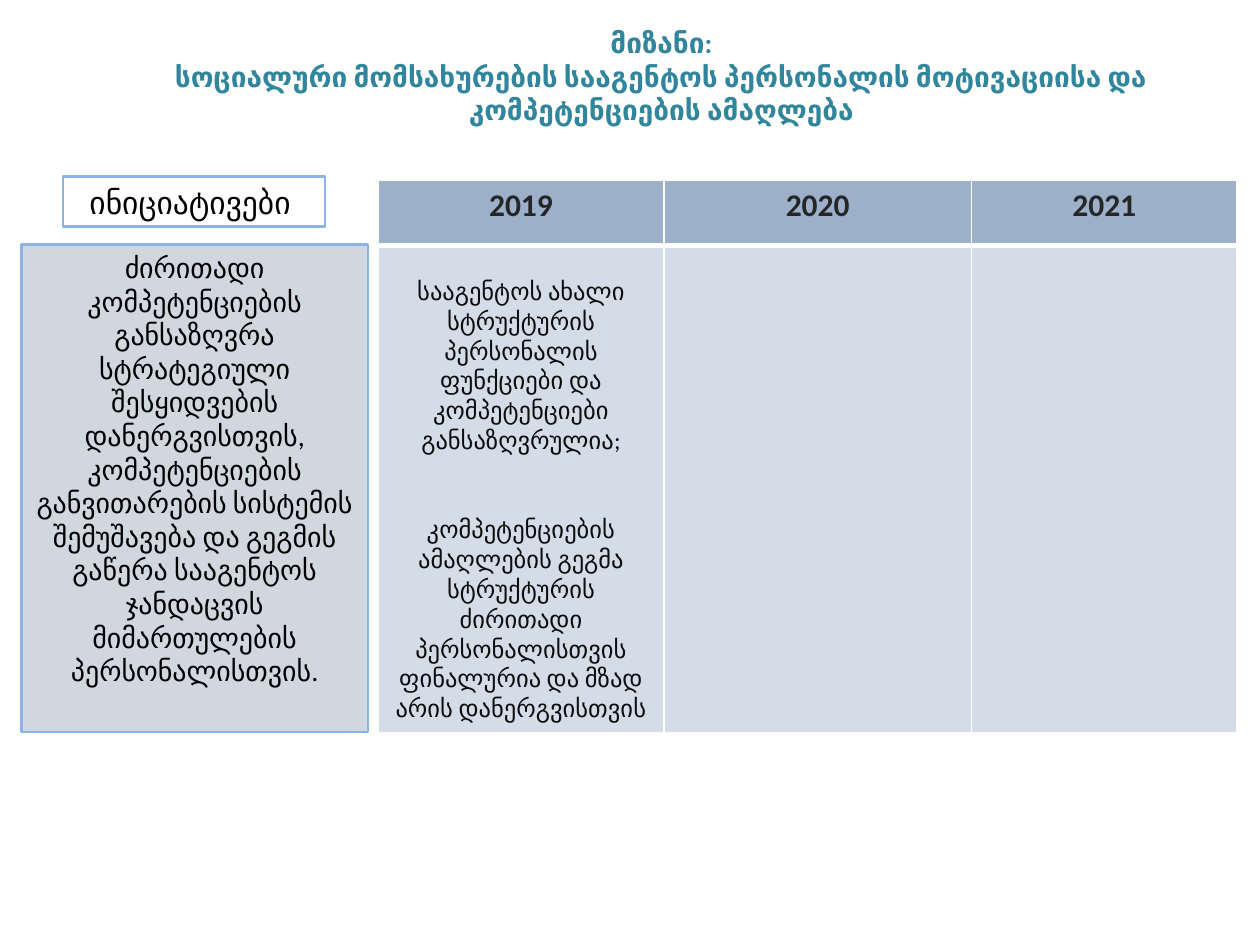
from dataclasses import dataclass

from lxml.etree import SubElement
from pptx import Presentation
from pptx.dml.color import RGBColor
from pptx.enum.shapes import MSO_SHAPE
from pptx.enum.text import MSO_ANCHOR, PP_ALIGN
from pptx.oxml.ns import qn
from pptx.util import Inches, Pt

FONT = "Calibri"
BLACK, WHITE = "000000", "FFFFFF"
TEAL, NAVY, BLUE, SKY = "31859C", "17375E", "376092", "8EB4E3"
HEADER_TEXT, BODY_TEXT = "262626", "0D0D0D"

TITLE = [
    "მიზანი:",
    "სოციალური მომსახურების სააგენტოს პერსონალის მოტივაციისა და კომპეტენციების ამაღლება",
]
INITIATIVE = (
    "ძირითადი კომპეტენციების განსაზღვრა სტრატეგიული შესყიდვების დანერგვისთვის, "
    "კომპეტენციების განვითარების სისტემის შემუშავება და გეგმის გაწერა სააგენტოს "
    "ჯანდაცვის მიმართულების პერსონალისთვის."
)
YEARS = ["2019", "2020", "2021"]
RESULTS_2019 = [
    "სააგენტოს ახალი სტრუქტურის პერსონალის ფუნქციები და კომპეტენციები განსაზღვრულია;",
    "კომპეტენციების ამაღლების გეგმა სტრუქტურის ძირითადი პერსონალისთვის ფინალურია "
    "და მზად არის დანერგვისთვის",
]
COLUMN_WIDTHS = [2.27, 2.44, 2.11]
ROW_HEIGHTS = [0.52, 3.87]


@dataclass
class Box:
    left: float
    top: float
    width: float
    height: float

    def lengths(self) -> list:
        return [Inches(v) for v in (self.left, self.top, self.width, self.height)]


def rgb(color: str) -> RGBColor:
    return RGBColor.from_string(color)


def write(tf, paragraphs: list[str], *, size: float, color: str, bold: bool = False,
          align=PP_ALIGN.CENTER, gap: float = 0) -> None:
    """Fill a text frame; gap is the space in points between paragraphs."""
    tf.word_wrap = True
    for i, text in enumerate(paragraphs):
        p = tf.paragraphs[0] if i == 0 else tf.add_paragraph()
        p.alignment = align
        if i and gap:
            p.space_before = Pt(gap)
        r = p.add_run()
        r.text = text
        r.font.name, r.font.size, r.font.bold = FONT, Pt(size), bold
        r.font.color.rgb = rgb(color)


def fill_clear(fill, props, color: str, opacity: int) -> None:
    """Fill solid with an opacity in percent; props is the XML holding the fill."""
    fill.solid()
    fill.fore_color.rgb = rgb(color)
    clr = props.find(qn("a:solidFill")).find(qn("a:srgbClr"))
    SubElement(clr, qn("a:alpha"), val=str(opacity * 1000))


def set_borders(cell, bottom: float) -> None:
    """Draw white 1 pt borders, with the bottom one of its own width."""
    tc_pr = cell._tc.get_or_add_tcPr()
    for i, (side, width) in enumerate([("L", 1), ("R", 1), ("T", 1), ("B", bottom)]):
        ln = SubElement(tc_pr, qn(f"a:ln{side}"), w=str(Pt(width)))
        SubElement(SubElement(ln, qn("a:solidFill")), qn("a:srgbClr"), val=WHITE)
        tc_pr.insert(i, ln)


def add_panel(slide, box: Box):
    sp = slide.shapes.add_shape(MSO_SHAPE.RECTANGLE, *box.lengths())
    sp.shadow.inherit = False
    sp.fill.background()
    sp.line.color.rgb = rgb(SKY)
    sp.line.width = Pt(1.5)
    sp.text_frame.vertical_anchor = MSO_ANCHOR.TOP
    return sp


def add_plan(slide, box: Box) -> None:
    table = slide.shapes.add_table(2, len(YEARS), *box.lengths()).table
    table.first_row = table.horz_banding = False
    for column, width in zip(table.columns, COLUMN_WIDTHS):
        column.width = Inches(width)
    for row, height in zip(table.rows, ROW_HEIGHTS):
        row.height = Inches(height)
    for c, year in enumerate(YEARS):
        for r, (opacity, bottom) in enumerate([(49, 3), (22, 1)]):
            cell = table.cell(r, c)
            fill_clear(cell.fill, cell._tc.get_or_add_tcPr(), BLUE, opacity)
            set_borders(cell, bottom)
        write(table.cell(0, c).text_frame, [year], size=18, color=HEADER_TEXT, bold=True)
    results = table.cell(1, 0)
    results.margin_top = Inches(0.25)
    write(results.text_frame, RESULTS_2019, size=14, color=BODY_TEXT, gap=34)


def main() -> None:
    prs = Presentation()
    prs.slide_width, prs.slide_height = Inches(10), Inches(7.5)
    slide = prs.slides.add_slide(prs.slide_layouts[6])

    title = slide.shapes.add_textbox(*Box(0.5, 0.17, 9.5, 0.87).lengths())
    title.text_frame.vertical_anchor = MSO_ANCHOR.MIDDLE
    write(title.text_frame, TITLE, size=16, color=TEAL, bold=True)

    heading = add_panel(slide, Box(0.5, 1.4, 2.08, 0.4))
    heading.text_frame.margin_left = Inches(0.21)
    write(heading.text_frame, ["ინიციატივები"], size=18, color=BLACK, align=PP_ALIGN.LEFT)

    initiative = add_panel(slide, Box(0.17, 1.94, 2.75, 3.87))
    fill_clear(initiative.fill, initiative._element.spPr, NAVY, 20)
    write(initiative.text_frame, [INITIATIVE], size=16, color=BLACK)

    add_plan(slide, Box(3, 1.43, sum(COLUMN_WIDTHS), sum(ROW_HEIGHTS)))
    prs.save("out.pptx")


if __name__ == "__main__":
    main()
